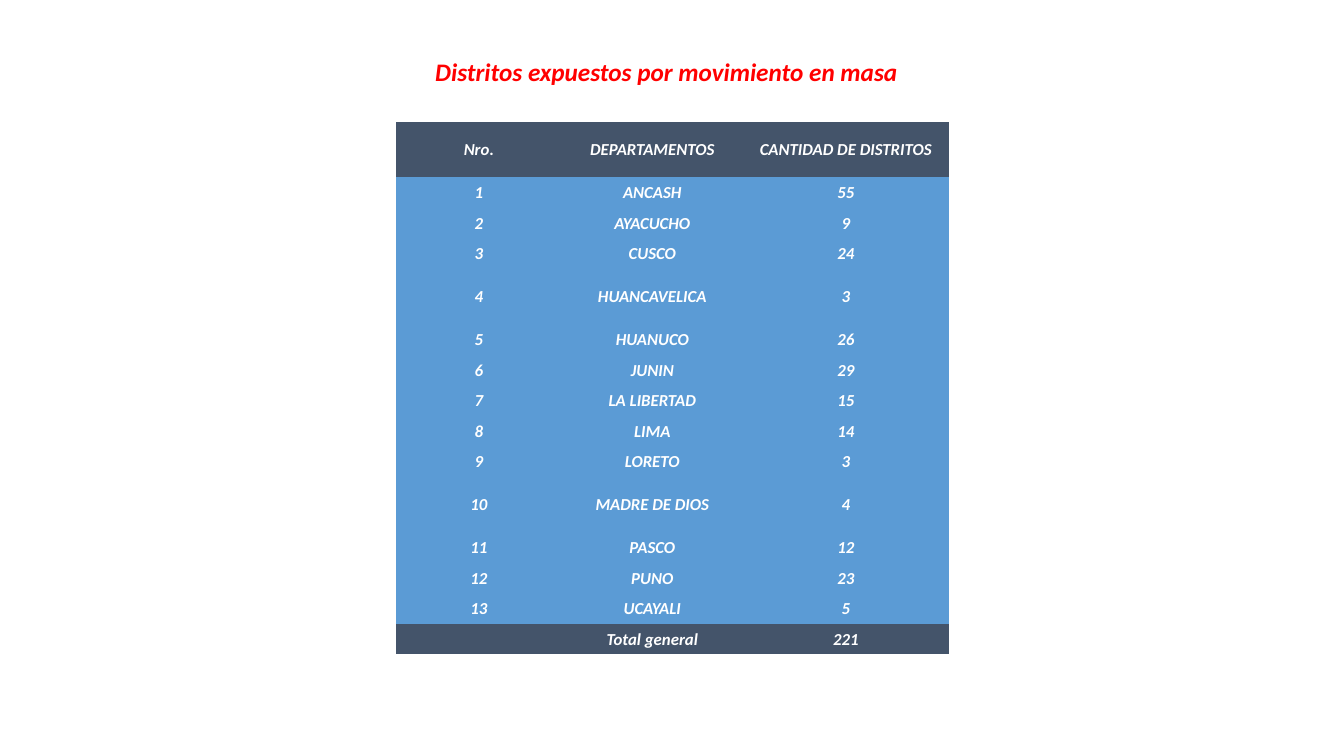
"""Slide with a table of districts exposed to mass movement, by department."""
from dataclasses import dataclass

from lxml.etree import SubElement
from pptx import Presentation
from pptx.dml.color import RGBColor
from pptx.enum.text import MSO_ANCHOR as Anchor, PP_ALIGN as Align
from pptx.oxml.ns import qn
from pptx.slide import Slide
from pptx.table import _Cell as Cell
from pptx.text.text import _Paragraph as Paragraph
from pptx.util import Inches, Pt

RED = RGBColor(0xFF, 0x00, 0x00)
WHITE = RGBColor(0xFF, 0xFF, 0xFF)
SLATE = RGBColor(0x44, 0x54, 0x6A)
BLUE = RGBColor(0x5B, 0x9B, 0xD5)

FONT = "Calibri"
CELL_SIZE = 12
COL_WIDTHS = (1.64, 1.8, 2.04)
TABLE_HEIGHT = 5.28
TALL_ROW = 0.55


@dataclass(frozen=True)
class Row:
    number: str
    department: str
    districts: str
    fill: RGBColor = BLUE
    tall: bool = False


DEPARTMENTS = (
    ("ANCASH", 55), ("AYACUCHO", 9), ("CUSCO", 24), ("HUANCAVELICA", 3),
    ("HUANUCO", 26), ("JUNIN", 29), ("LA LIBERTAD", 15), ("LIMA", 14),
    ("LORETO", 3), ("MADRE DE DIOS", 4), ("PASCO", 12), ("PUNO", 23),
    ("UCAYALI", 5),
)
TALL_DEPARTMENTS = ("HUANCAVELICA", "MADRE DE DIOS")

ROWS = (
    Row("Nro.", "DEPARTAMENTOS", "CANTIDAD DE DISTRITOS", SLATE, True),
    *(Row(str(i), name, str(count), tall=name in TALL_DEPARTMENTS)
      for i, (name, count) in enumerate(DEPARTMENTS, 1)),
    Row("", "Total general", "221", SLATE),
)


def format_paragraph(p: Paragraph, size: float, color: RGBColor) -> None:
    p.alignment = Align.CENTER
    for r in p.runs:
        r.font.name = FONT
        r.font.size = Pt(size)
        r.font.bold = r.font.italic = True
        r.font.color.rgb = color


def add_title(s: Slide, text: str) -> None:
    tf = s.shapes.add_textbox(
        Inches(4.22), Inches(0.51), Inches(4.9), Inches(0.4)).text_frame
    tf.word_wrap = True
    tf.margin_left, tf.margin_right = 0, Inches(0.12)
    tf.text = text
    format_paragraph(tf.paragraphs[0], 18, RED)


def fill_cell(cell: Cell, text: str, fill: RGBColor) -> None:
    cell.fill.solid()
    cell.fill.fore_color.rgb = fill
    cell.vertical_anchor = Anchor.MIDDLE
    cell.margin_left = cell.margin_right = cell.margin_top = Inches(0.01)
    cell.margin_bottom = 0
    p = cell.text_frame.paragraphs[0]
    p.text = text
    format_paragraph(p, CELL_SIZE, WHITE)
    if not text:
        SubElement(p._p, qn("a:endParaRPr"), sz=str(CELL_SIZE * 100))


def add_districts_table(s: Slide) -> None:
    table = s.shapes.add_table(
        len(ROWS), len(COL_WIDTHS), Inches(3.93), Inches(1.21),
        Inches(sum(COL_WIDTHS)), Inches(TABLE_HEIGHT)).table
    table.horz_banding = False
    for column, width in zip(table.columns, COL_WIDTHS):
        column.width = Inches(width)
    tall_count = sum(row.tall for row in ROWS)
    short_row = (TABLE_HEIGHT - tall_count * TALL_ROW) / (len(ROWS) - tall_count)
    tbl_pr = table._tbl.tblPr
    tbl_pr.find(qn("a:tableStyleId")).text = "{2D5ABB26-0587-4C30-8999-92F81FD0307C}"
    for line, row in zip(table.rows, ROWS):
        line.height = Inches(TALL_ROW if row.tall else short_row)
        for cell, text in zip(line.cells, (row.number, row.department, row.districts)):
            fill_cell(cell, text, row.fill)


def main() -> None:
    prs = Presentation()
    prs.slide_width, prs.slide_height = Inches(13.33), Inches(7.5)
    s = prs.slides.add_slide(prs.slide_layouts[6])
    add_title(s, "Distritos expuestos por movimiento en masa")
    add_districts_table(s)
    prs.save("out.pptx")


if __name__ == "__main__":
    main()
